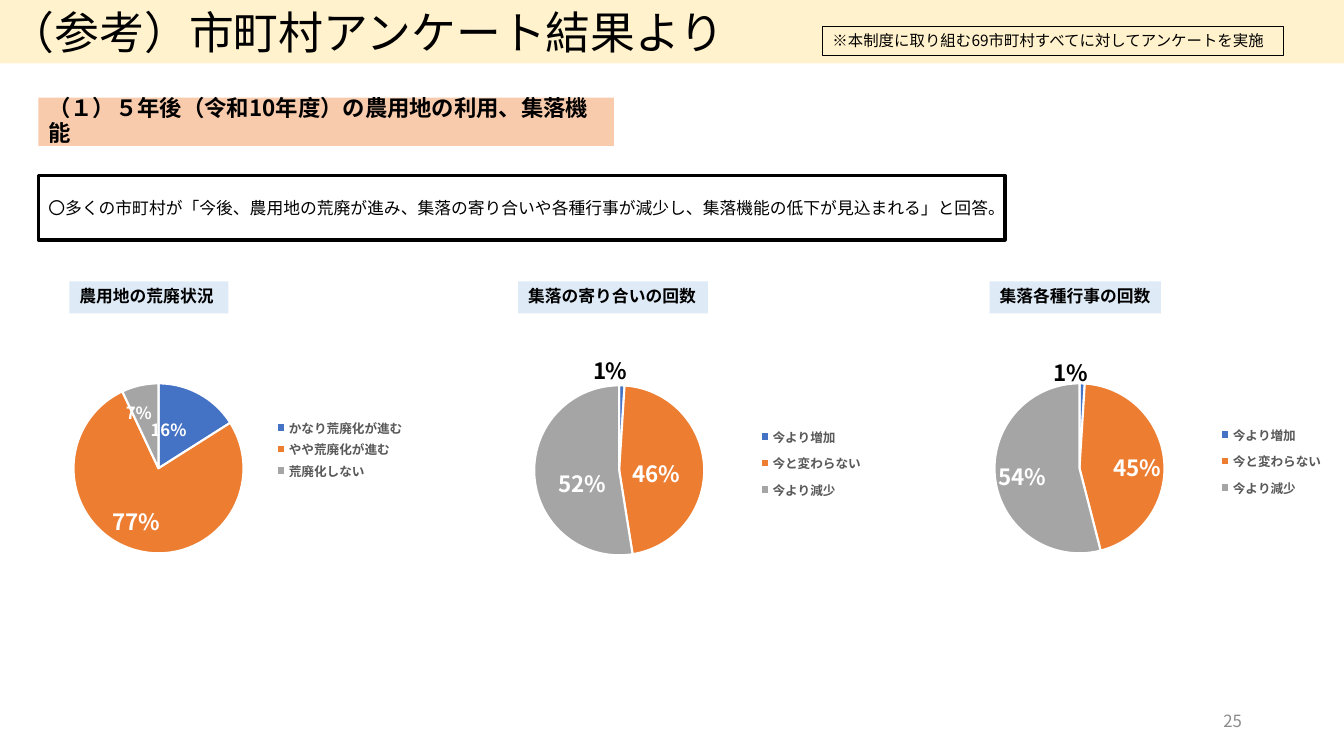
from dataclasses import dataclass

from lxml import etree
from pptx import Presentation, util as u
from pptx.chart.data import CategoryChartData
from pptx.dml.color import RGBColor
from pptx.enum import chart as ch, shapes, text
from pptx.oxml.ns import qn


@dataclass(frozen=True)
class Theme:
    font: str = "Noto Sans CJK JP"
    ink: str = "000000"
    white: str = "FFFFFF"
    muted: str = "8C8C8C"
    legend: str = "595959"
    banner: str = "FFF2CC"
    section: str = "F8CBAD"
    heading: str = "DEEBF7"
    slices: tuple = ("4472C4", "ED7D31", "A5A5A5")
    title_pt: int = 32
    section_pt: int = 16
    body_pt: int = 12
    note_pt: int = 11
    chart_pt: int = 10
    legend_pt: int = 9


T = Theme()

TITLE = "（参考）市町村アンケート結果より"
NOTE = "※本制度に取り組む69市町村すべてに対してアンケートを実施"
SECTION = "（１）５年後（令和10年度）の農用地の利用、集落機能"
FINDING = ("〇多くの市町村が「今後、農用地の荒廃が進み、集落の寄り合いや各種行事が減少し、"
           "集落機能の低下が見込まれる」と回答。")
PAGE = "25"

FREQUENCY = ("今より増加", "今と変わらない", "今より減少")
SMALL, LARGE = T.body_pt, T.section_pt
# Each label: size, colour, shift from the slice centre as a share of the chart.
SURVEYS = [
    {"heading": "農用地の荒廃状況", "heading_box": (1.75, 4.01), "chart_at": (-0.38, 8.56),
     "cats": ("かなり荒廃化が進む", "やや荒廃化が進む", "荒廃化しない"), "vals": (16, 77, 7),
     "legend": (0.55, 0.31, 0.27, 0.28),
     "labels": [(SMALL, T.white, -0.02, -0.01), (LARGE, T.white, -0.02, 0.05),
                (SMALL, T.white, -0.02, -0.06)]},
    {"heading": "集落の寄り合いの回数", "heading_box": (13.06, 4.78), "chart_at": (11.23, 8.61),
     "cats": FREQUENCY, "vals": (1, 46, 52), "legend": (0.59, 0.32, 0.23, 0.36),
     "labels": [(LARGE, T.ink, -0.02, -0.24), (LARGE, T.white, -0.01, 0.02),
                (LARGE, T.white, 0.01, 0.04)]},
    {"heading": "集落各種行事の回数", "heading_box": (24.94, 4.32), "chart_at": (22.83, 8.56),
     "cats": FREQUENCY, "vals": (1, 45, 54), "legend": (0.59, 0.32, 0.23, 0.36),
     "labels": [(LARGE, T.ink, -0.02, -0.22), (LARGE, T.white, 0.03, 0.01),
                (LARGE, T.white, -0.03, 0.01)]},
]
HEADING_TOP, HEADING_HEIGHT = 7.09, 0.81
CHART_SIZE = (13.06, 6.12)
PLOT = (0.17, 0.18, 0.33, 0.7)


def cm(lengths):
    return [u.Cm(n) for n in lengths]


def style(font, size, color, bold=False):
    font.name, font.size, font.bold = T.font, u.Pt(size), bold
    font.color.rgb = RGBColor.from_string(color)


def write(sp, words, size, color=T.ink, bold=False, spacing=1.0,
          align=text.PP_ALIGN.LEFT, right=0.25):
    tf = sp.text_frame
    tf.word_wrap = True
    tf.auto_size = text.MSO_AUTO_SIZE.NONE
    tf.vertical_anchor = text.MSO_ANCHOR.MIDDLE
    tf.margin_left, tf.margin_right = cm((0.25, right))
    tf.margin_top = tf.margin_bottom = u.Cm(0.13)
    p = tf.paragraphs[0]
    p.alignment, p.line_spacing = align, spacing
    r = p.add_run()
    r.text = words
    style(r.font, size, color, bold)
    etree.SubElement(r.font._element, qn("a:ea"), typeface=T.font)


def add_box(s, box, words, size, fill=None, line=None, **options):
    sp = s.shapes.add_shape(shapes.MSO_SHAPE.RECTANGLE, *cm(box))
    sp.shadow.inherit = False
    if fill:
        sp.fill.solid()
        sp.fill.fore_color.rgb = RGBColor.from_string(fill)
    else:
        sp.fill.background()
    if line:
        sp.line.color.rgb = RGBColor.from_string(T.ink)
        sp.line.width = u.Pt(line)
    else:
        sp.line.fill.background()
    write(sp, words, size, **options)


def set_layout(parent, index, **values):
    """Place a chart part by hand, replacing any layout it already has."""
    for old in parent.findall(qn("c:layout")):
        parent.remove(old)
    layout = etree.Element(qn("c:layout"))
    manual = etree.SubElement(layout, qn("c:manualLayout"))
    for tag, value in values.items():
        etree.SubElement(manual, qn("c:" + tag), val=str(value))
    parent.insert(index, layout)


def set_frame(parent, index, box, **target):
    set_layout(parent, index, **target, xMode="edge", yMode="edge",
               **dict(zip("xywh", box)))


def add_pie(s, survey):
    data = CategoryChartData()
    data.categories = survey["cats"]
    data.add_series("Series 1", survey["vals"])
    chart = s.shapes.add_chart(ch.XL_CHART_TYPE.PIE, *cm(survey["chart_at"] + CHART_SIZE),
                               data).chart
    chart.has_title = False
    style(chart.font, T.chart_pt, T.ink)
    chart.has_legend = True
    legend = chart.legend
    legend.position = ch.XL_LEGEND_POSITION.RIGHT
    legend.include_in_layout = False
    style(legend.font, T.legend_pt, T.legend, True)
    set_frame(legend._element, 1, survey["legend"])
    plot = chart.plots[0]
    plot.vary_by_categories = True
    set_frame(plot._element.getparent(), 0, PLOT, layoutTarget="inner")

    series = plot.series[0]
    for i, (color, label) in enumerate(zip(T.slices, survey["labels"])):
        size, ink, dx, dy = label
        point = series.points[i]
        point.format.fill.solid()
        point.format.fill.fore_color.rgb = RGBColor.from_string(color)
        point.format.line.color.rgb = RGBColor.from_string(T.white)
        point.format.line.width = u.Pt(1.5)
        point.data_label.position = ch.XL_LABEL_POSITION.CENTER
        style(point.data_label.font, size, ink, True)
    for label, (_, _, dx, dy) in zip(series._element.iter(qn("c:dLbl")), survey["labels"]):
        set_layout(label, 1, x=dx, y=dy)
        label.insert(2, etree.Element(qn("c:numFmt"), formatCode='0"%"', sourceLinked="0"))


def main():
    prs = Presentation()
    prs.slide_width, prs.slide_height = cm((33.87, 19.05))
    s = prs.slides.add_slide(prs.slide_layouts[5])

    title = s.shapes.title
    title.left, title.top, title.width, title.height = cm((0, -0.03, 33.87, 1.63))
    title.fill.solid()
    title.fill.fore_color.rgb = RGBColor.from_string(T.banner)
    write(title, TITLE, T.title_pt)

    page = s.shapes.add_textbox(*cm((23.93, 17.65, 7.62, 1.02)))
    write(page, PAGE, T.body_pt, T.muted, align=text.PP_ALIGN.RIGHT)
    add_box(s, (20.73, 0.66, 11.61, 0.74), NOTE, T.note_pt, line=0.5, right=0)
    add_box(s, (0.97, 2.46, 14.5, 1.22), SECTION, T.section_pt, T.section,
            bold=True, spacing=0.9)
    for survey in SURVEYS:
        add_pie(s, survey)
        left, width = survey["heading_box"]
        add_box(s, (left, HEADING_TOP, width, HEADING_HEIGHT), survey["heading"],
                T.body_pt, T.heading, bold=True, spacing=0.9)
    add_box(s, (0.97, 4.42, 24.36, 1.63), FINDING, T.body_pt, line=2.25, right=0)
    prs.save("out.pptx")


if __name__ == "__main__":
    main()
